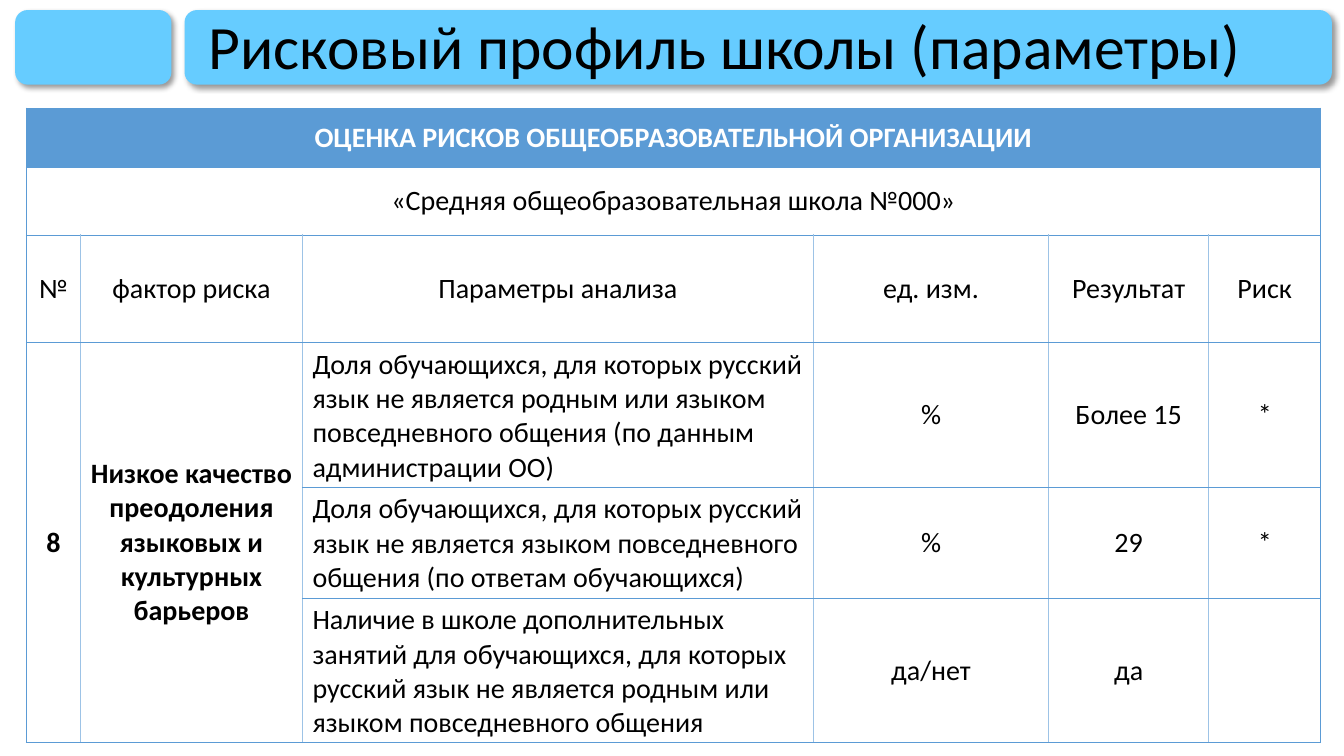
from lxml import etree
from pptx import Presentation
from pptx.dml.color import RGBColor
from pptx.enum.shapes import MSO_SHAPE
from pptx.enum.text import MSO_ANCHOR, PP_ALIGN
from pptx.oxml import parse_xml
from pptx.oxml.ns import nsdecls
from pptx.util import Inches, Pt

SKY = RGBColor(0x66, 0xCC, 0xFF)
BLUE = RGBColor(0x5B, 0x9B, 0xD5)
PALE_BLUE = RGBColor(0x9D, 0xC3, 0xE6)
BLACK = RGBColor(0, 0, 0)
WHITE = RGBColor(0xFF, 0xFF, 0xFF)
FONT = "Calibri"

SHADOW = (
    f'<a:effectLst {nsdecls("a")}>'
    f'<a:outerShdw blurRad="{Pt(4)}" dist="{Pt(3)}" dir="2700000" algn="tl" rotWithShape="0">'
    '<a:srgbClr val="000000"><a:alpha val="40000"/></a:srgbClr>'
    '</a:outerShdw></a:effectLst>'
)


def style_text(paragraph, size, color, bold=False):
    font = paragraph.font
    font.name, font.size, font.bold = FONT, Pt(size), bold
    font.color.rgb = color


def add_border(cell, side, color, width):
    """Draw one cell edge; side is L, R, T or B, called in that order."""
    cell._tc.get_or_add_tcPr().append(parse_xml(
        f'<a:ln{side} {nsdecls("a")} w="{Pt(width)}"><a:solidFill>'
        f'<a:srgbClr val="{color}"/></a:solidFill></a:ln{side}>'))


prs = Presentation()
prs.slide_width, prs.slide_height = Inches(13.33), Inches(7.5)
slide = prs.slides.add_slide(prs.slide_layouts[6])

# Header plates
for left, width in [(1.83, 11.38), (0.15, 1.55)]:
    plate = slide.shapes.add_shape(
        MSO_SHAPE.ROUNDED_RECTANGLE, Inches(left), Inches(0.1), Inches(width), Inches(0.74))
    plate.fill.solid()
    plate.fill.fore_color.rgb = SKY
    plate.line.fill.background()
    plate._element.spPr.append(etree.fromstring(SHADOW))

# Title
title = slide.shapes.add_textbox(Inches(1.97), Inches(0.16), Inches(11.1), Inches(0.66)).text_frame
title.word_wrap = True
title.vertical_anchor = MSO_ANCHOR.MIDDLE
title.text = "Рисковый профиль школы (параметры)"
title.paragraphs[0].line_spacing = 0.9
style_text(title.paragraphs[0], 44, BLACK)

# Risk table
COLUMN_WIDTHS = [0.54, 2.2, 5.07, 2.33, 1.59, 1.11]
ROW_HEIGHTS = [0.59, 0.67, 1.07, 1.07, 1.07, 1.07]
RISK_ROWS = [
    ["ОЦЕНКА РИСКОВ ОБЩЕОБРАЗОВАТЕЛЬНОЙ ОРГАНИЗАЦИИ"],
    ["«Средняя общеобразовательная школа №000»"],
    ["№", "фактор риска", "Параметры анализа", "ед. изм.", "Результат", "Риск"],
    ["8", "Низкое качество преодоления языковых и культурных барьеров",
     "Доля обучающихся, для которых русский язык не является родным или языком "
     "повседневного общения (по данным администрации ОО)", "%", "Более 15", "*"],
    ["", "", "Доля обучающихся, для которых русский язык не является языком "
     "повседневного общения (по ответам обучающихся)", "%", "29", "*"],
    ["", "", "Наличие в школе дополнительных занятий для обучающихся, для которых "
     "русский язык не является родным или языком повседневного общения", "да/нет", "да", ""],
]
BANNER_ROWS, FIRST_RISK_ROW, FACTOR_COLUMNS, PARAMETER_COLUMN = 2, 3, 2, 2
last_row, last_column = len(ROW_HEIGHTS) - 1, len(COLUMN_WIDTHS) - 1

risks = slide.shapes.add_table(
    len(ROW_HEIGHTS), len(COLUMN_WIDTHS),
    Inches(0.26), Inches(1.07), Inches(12.85), Inches(6.3)).table
risks.first_row = risks.horz_banding = False
for column, width in zip(risks.columns, COLUMN_WIDTHS):
    column.width = Inches(width)
for row, height in zip(risks.rows, ROW_HEIGHTS):
    row.height = Inches(height)
for r in range(BANNER_ROWS):
    risks.cell(r, 0).merge(risks.cell(r, last_column))
for c in range(FACTOR_COLUMNS):
    risks.cell(FIRST_RISK_ROW, c).merge(risks.cell(last_row, c))

for r, texts in enumerate(RISK_ROWS):
    for c, text in enumerate(texts):
        cell = risks.cell(r, c)
        if cell.is_spanned:
            continue
        is_heading = r == 0
        is_factor = r >= FIRST_RISK_ROW and c < FACTOR_COLUMNS
        is_parameter = r >= FIRST_RISK_ROW and c == PARAMETER_COLUMN
        cell.text = text
        cell.vertical_anchor = MSO_ANCHOR.MIDDLE
        paragraph = cell.text_frame.paragraphs[0]
        paragraph.alignment = PP_ALIGN.LEFT if is_parameter else PP_ALIGN.CENTER
        style_text(paragraph, 20, WHITE if is_heading else BLACK, is_heading or is_factor)

        outer, inner = (BLUE, 0.5), (PALE_BLUE, 1)
        ends_row = r < BANNER_ROWS or c == last_column
        add_border(cell, "L", *(outer if c == 0 else inner))
        add_border(cell, "R", *(outer if ends_row else inner))
        add_border(cell, "T", *outer)
        add_border(cell, "B", *outer)
        if is_heading:
            cell.fill.solid()
            cell.fill.fore_color.rgb = BLUE
        else:
            cell.fill.background()

prs.save("out.pptx")
